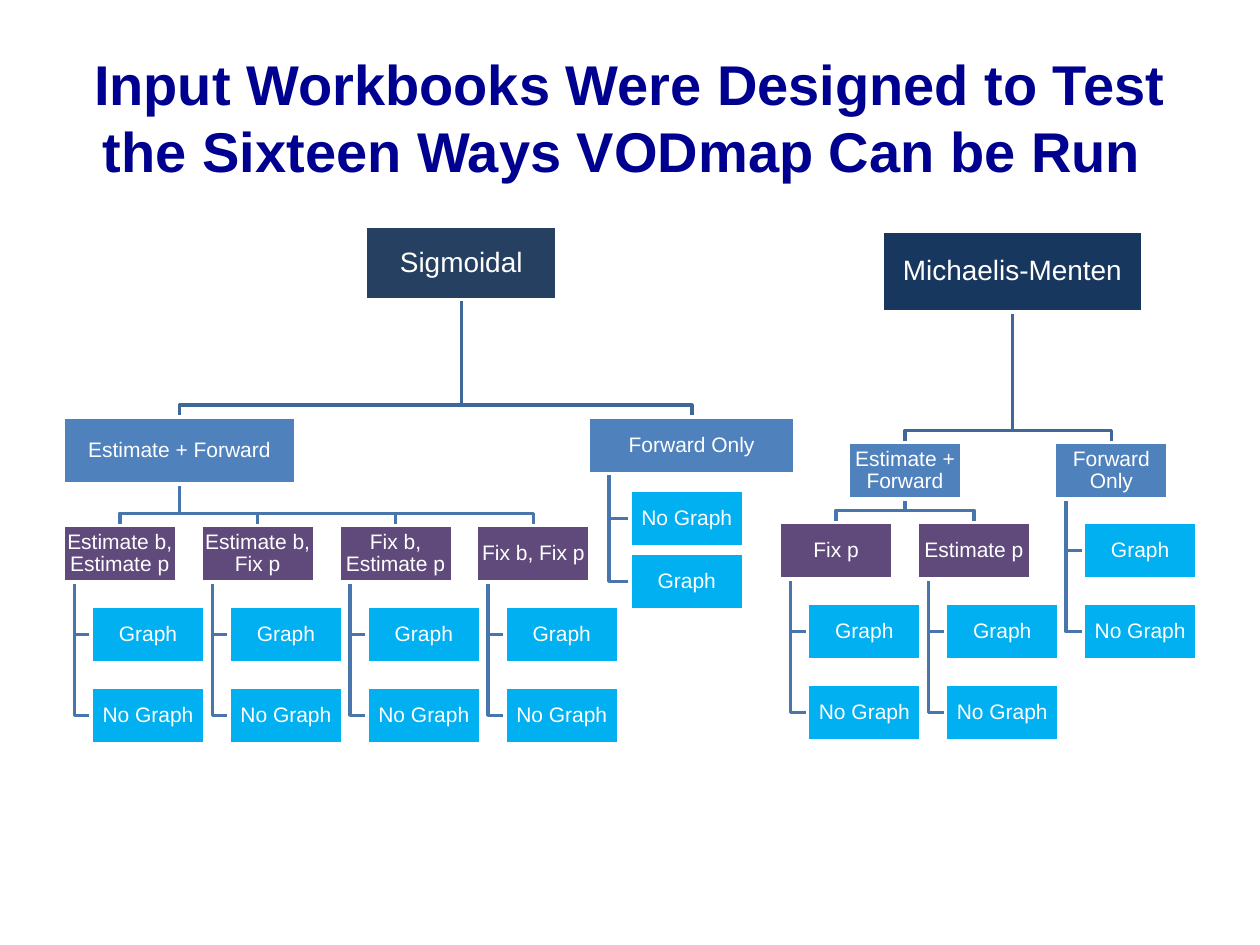
"""Build the slide with the two trees of ways to run the model."""
from pptx import Presentation
from pptx.dml.color import RGBColor
from pptx.enum.shapes import MSO_SHAPE
from pptx.enum.text import MSO_ANCHOR, PP_ALIGN
from pptx.util import Cm, Pt

TITLE = "Input Workbooks Were Designed to Test the Sixteen Ways VODmap Can be Run "
GRAPHS = ("Graph", "No Graph")
TREES = [
    {"model": "Sigmoidal", "level": "sigmoidal", "box": (7.37, 4.57, 3.86, 1.47),
     "branches": [
         {"run": "Estimate + Forward", "box": (1.27, 8.41, 4.7, 1.35),
          "settings": ("Estimate b, Estimate p", "Estimate b, Fix p",
                       "Fix b, Estimate p", "Fix b, Fix p"),
          "start": (1.27, 10.59)},
         {"run": "Forward Only", "box": (11.86, 8.41, 4.17, 1.14),
          "outputs": GRAPHS[::-1], "start": (12.7, 9.88), "pitch": 1.27},
     ]},
    {"model": "Michaelis-Menten", "level": "michaelis", "box": (17.78, 4.67, 5.26, 1.62),
     "branches": [
         {"run": "Estimate + Forward", "box": (17.1, 8.92, 2.29, 1.14),
          "settings": ("Fix p", "Estimate p"), "start": (15.71, 10.53)},
         {"run": "Forward Only", "box": (21.26, 8.92, 2.29, 1.14),
          "outputs": GRAPHS, "start": (21.84, 10.53), "pitch": 1.63},
     ]},
]
COLORS = {"title": "000090", "white": "FFFFFF", "sigmoidal": "254061",
          "michaelis": "17375E", "run": "4F81BD", "setting": "604A7B",
          "output": "00B0F0", "upper link": "3F6797", "lower link": "4875AC"}
SMALL = (2.29, 1.14)
COLUMN_PITCH, ROW_PITCH = 2.78, 1.63
INDENT, ELBOW = 0.57, 0.24


def color(name):
    return RGBColor.from_string(COLORS[name])


def fork(parent, child):
    """Points from the parent's bottom centre to the child's top centre."""
    x, y, width, height = parent
    stem, end = x + width / 2, child[0] + child[2] / 2
    bend = child[1] - ELBOW
    return [(stem, y + height), (stem, bend), (end, bend), (end, child[1])]


def hang(parent, child):
    """Points from the parent's bottom edge to the child's left side."""
    x, y, width, height = parent
    stem, middle = x + width / 10, child[1] + child[3] / 2
    return [(stem, y + height), (stem, middle), (child[0], middle)]


def plan():
    """Return all boxes and links of the trees."""
    boxes, links = [], []

    def add_outputs(parent, labels, left, top, pitch):
        for row, label in enumerate(labels):
            box = (left, top + row * pitch, *SMALL)
            boxes.append((label, "output", box))
            links.append(("lower link", hang(parent, box)))

    for tree in TREES:
        boxes.append((tree["model"], tree["level"], tree["box"]))
        for branch in tree["branches"]:
            run = branch["box"]
            left, top = branch["start"]
            boxes.append((branch["run"], "run", run))
            links.append(("upper link", fork(tree["box"], run)))
            if "outputs" in branch:
                add_outputs(run, branch["outputs"], left, top, branch["pitch"])
            for column, label in enumerate(branch.get("settings", ())):
                setting = (left + column * COLUMN_PITCH, top, *SMALL)
                boxes.append((label, "setting", setting))
                links.append(("lower link", fork(run, setting)))
                add_outputs(setting, GRAPHS, setting[0] + INDENT, top + ROW_PITCH, ROW_PITCH)
    return boxes, links


def write(frame, text, size, name, bold=False):
    frame.word_wrap = True
    frame.vertical_anchor = MSO_ANCHOR.MIDDLE
    frame.text = text
    paragraph = frame.paragraphs[0]
    paragraph.alignment = PP_ALIGN.CENTER
    font = paragraph.runs[0].font
    font.name, font.size, font.bold = "Arial", Pt(size), bold
    font.color.rgb = color(name)
    return paragraph


def draw_link(slide, level, points):
    start, *rest = [(Cm(x), Cm(y)) for x, y in points]
    builder = slide.shapes.build_freeform(*start)
    builder.add_line_segments(rest, close=False)
    link = builder.convert_to_shape()
    link.shadow.inherit = False
    link.fill.background()
    link.line.color.rgb = color(level)
    link.line.width = Pt(2)


def draw_box(slide, label, level, box):
    node = slide.shapes.add_shape(MSO_SHAPE.RECTANGLE, *map(Cm, box))
    node.shadow.inherit = False
    node.fill.solid()
    node.fill.fore_color.rgb = color(level)
    node.line.color.rgb = color("white")
    node.line.width = Pt(2)
    frame = node.text_frame
    frame.margin_left = frame.margin_right = Cm(0.03)
    frame.margin_top = frame.margin_bottom = Cm(0.03)
    size = 16 if level in ("sigmoidal", "michaelis") else 12
    write(frame, label, size, "white").line_spacing = 0.9


def main():
    deck = Presentation()
    deck.slide_width, deck.slide_height = Cm(25.4), Cm(19.05)
    slide = deck.slides.add_slide(deck.slide_layouts[6])
    heading = slide.shapes.add_textbox(Cm(1.27), Cm(0.76), Cm(22.86), Cm(3.18))
    write(heading.text_frame, TITLE, 32, "title", bold=True)
    boxes, links = plan()
    for link in links:
        draw_link(slide, *link)
    for box in boxes:
        draw_box(slide, *box)
    deck.save("out.pptx")


if __name__ == "__main__":
    main()
